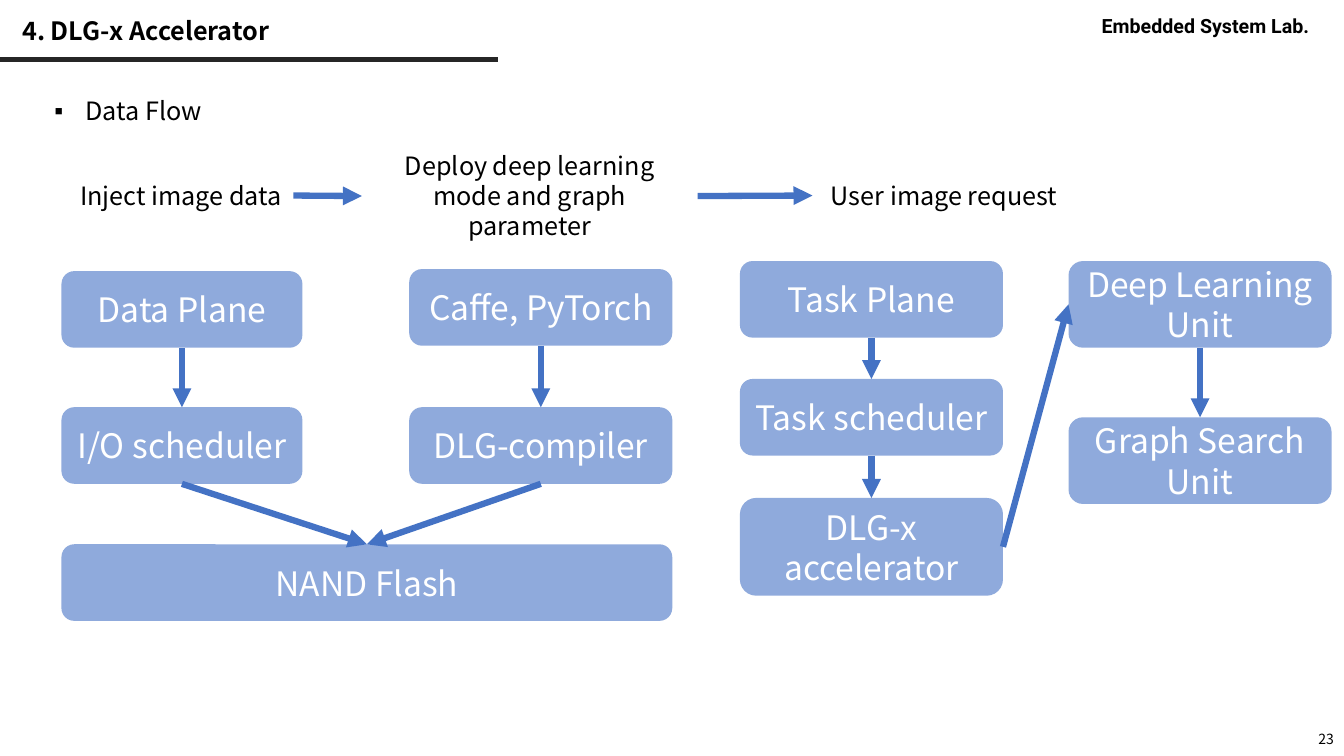
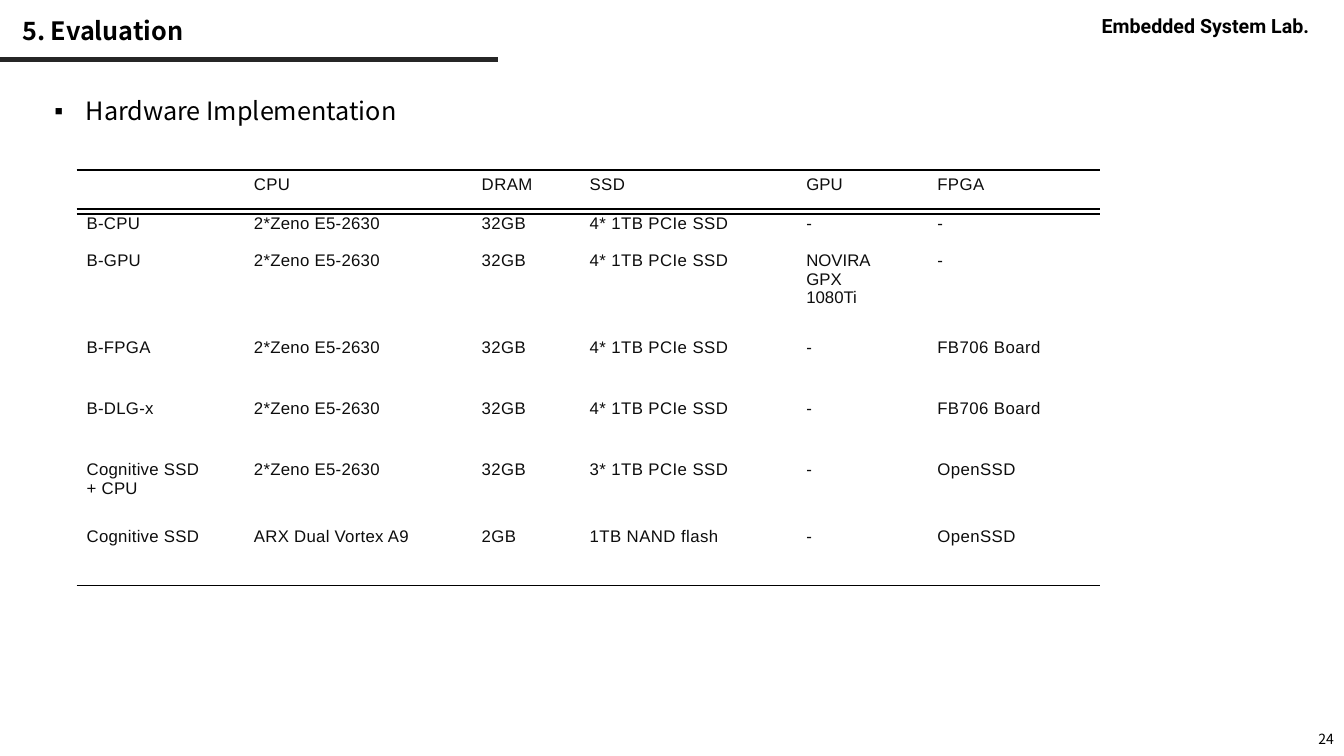
from collections import namedtuple

from lxml import etree
from pptx import Presentation, util as u
from pptx.dml.color import RGBColor
from pptx.enum import shapes, text
from pptx.oxml import parse_xml
from pptx.oxml.ns import nsdecls, qn

BLACK = RGBColor(0x00, 0x00, 0x00)
WHITE = RGBColor(0xFF, 0xFF, 0xFF)
RULE = RGBColor(0x26, 0x26, 0x26)
CELL_TEXT = RGBColor(0x0D, 0x0D, 0x0D)
STEP = RGBColor(0x8F, 0xAA, 0xDC)
ARROW = RGBColor(0x44, 0x72, 0xC4)
SANS, LAB_FONT, TABLE_FONT = "Noto Sans CJK KR", "Roboto", "Arial"
NO_TABLE_STYLE = "{2D5ABB26-0587-4C30-8999-92F81FD0307C}"

# All lengths are columns and rows of one square grid.
GRID = u.Inches(0.1)
COLS, ROWS = 133.33, 75
TOP, LEFT, BOTTOM, RIGHT = range(4)
LEFT_ALIGN, CENTER, RIGHT_ALIGN = (
    text.PP_ALIGN.LEFT, text.PP_ALIGN.CENTER, text.PP_ALIGN.RIGHT)


def cells(count):
    return u.Emu(round(count * GRID))


class Box(namedtuple("Box", "left top width height")):
    def within(self, left, top, width, height):
        """Box whose corner is given relative to this one."""
        return Box(self.left + left, self.top + top, width, height)

    def emu(self):
        return [cells(length) for length in self]


TITLE = Box(1.2, 1.2, 97.1, 4)
LAB = Box(108.3, 0.9, 24.9, 3.4)
TOPIC = Box(4.4, 9, 120.5, 4)
PAGE_NUMBER = Box(103.3, 71.7, 30, 3.2)
FLOW = Box(6.1, 14.4, 126, 47.2)
HARDWARE = Box(7.6, 16.9, 101.5, 41.2)


def write(frame, words, size=18, font=SANS, color=BLACK, bold=False,
          align=LEFT_ALIGN, anchor=text.MSO_ANCHOR.TOP, line_spacing=None,
          bullet=None, tracking=0):
    """Fill a text frame, one paragraph per line of words."""
    frame.text = words
    frame.word_wrap = True
    frame.vertical_anchor = anchor
    for paragraph in frame.paragraphs:
        if bullet:
            props = paragraph._p.get_or_add_pPr()
            props.set("marL", str(cells(3.1)))
            props.set("indent", str(cells(-3.1)))
            etree.SubElement(props, qn("a:buChar")).set("char", bullet)
        paragraph.alignment = align
        paragraph.space_before = u.Pt(0)
        paragraph.line_spacing = line_spacing
        for run in paragraph.runs:
            run.font.size = u.Pt(size)
            run.font.name = font
            run.font.bold = bold
            run.font.color.rgb = color
            if tracking:
                run._r.get_or_add_rPr().set("spc", str(round(tracking * 100)))


def place(shape, box):
    shape.left, shape.top, shape.width, shape.height = box.emu()


def label(slide, box, words, **style):
    shape = slide.shapes.add_textbox(*box.emu())
    write(shape.text_frame, words, **style)
    return shape


def line(slide, color, width, start=(0, 0), end=(0, 0)):
    connector = slide.shapes.add_connector(
        shapes.MSO_CONNECTOR.STRAIGHT, *map(cells, start + end))
    connector.line.color.rgb = color
    connector.line.width = u.Pt(width)
    etree.SubElement(connector._element.spPr, qn("a:effectLst"))
    return connector


def arrow(slide, source, source_side, target, target_side):
    connector = line(slide, ARROW, 4.5)
    connector.begin_connect(source, source_side)
    connector.end_connect(target, target_side)
    etree.SubElement(connector.line._get_or_add_ln(),
                     qn("a:tailEnd")).set("type", "triangle")


def step(slide, box, words):
    shape = slide.shapes.add_shape(
        shapes.MSO_SHAPE.ROUNDED_RECTANGLE, *box.emu())
    shape.shadow.inherit = False
    shape.fill.solid()
    shape.fill.fore_color.rgb = STEP
    shape.line.fill.background()
    write(shape.text_frame, words, size=24, color=WHITE, align=CENTER,
          anchor=text.MSO_ANCHOR.MIDDLE)
    return shape


def content_slide(deck, title, topic, number):
    """Slide with the shared heading, rule, lab name, topic and number."""
    slide = deck.slides.add_slide(deck.slide_layouts[1])
    heading, body = slide.placeholders
    line(slide, RULE, 3, (0, 5.9), (49.4, 5.9))
    label(slide, LAB, "Embedded System Lab.", size=14, font=LAB_FONT,
          bold=True)
    place(heading, TITLE)
    write(heading.text_frame, title, bold=True, line_spacing=0.9,
          anchor=text.MSO_ANCHOR.MIDDLE)
    place(body, TOPIC)
    write(body.text_frame, topic, bullet="▪")
    for placeholder in (heading, body):
        placeholder.text_frame.auto_size = text.MSO_AUTO_SIZE.NONE
    label(slide, PAGE_NUMBER, str(number), size=10, align=RIGHT_ALIGN,
          anchor=text.MSO_ANCHOR.MIDDLE)
    return slide


def data_flow(slide, box):
    phases = [
        label(slide, box.within(*area), words, align=CENTER)
        for area, words in (
            ((0.7, 3, 22.3, 4), "Inject image data"),
            ((29.8, 0, 33.3, 10.1),
             "Deploy deep learning mode and graph parameter"),
            ((74.5, 3, 26.1, 4), "User image request"))]
    for phase, following in zip(phases, phases[1:]):
        arrow(slide, phase, RIGHT, following, LEFT)

    # Each chain: left, width, then (top, height, words) of its steps.
    chains = (
        (0, 23.9, ((12.5, 7.6, "Data Plane"), (26, 7.6, "I/O scheduler"))),
        (34.5, 26.1, ((12.3, 7.6, "Caffe, PyTorch"),
                      (26, 7.6, "DLG-compiler"))),
        (67.3, 26.1, ((11.5, 7.6, "Task Plane"),
                      (23.2, 7.6, "Task scheduler"),
                      (35, 9.7, "DLG-x\naccelerator"))),
        (99.9, 26.1, ((11.5, 8.6, "Deep Learning\nUnit"),
                      (27, 8.6, "Graph Search\nUnit"))))
    built = []
    for left, width, steps in chains:
        chain = [step(slide, box.within(left, top, width, height), words)
                 for top, height, words in steps]
        for source, target in zip(chain, chain[1:]):
            arrow(slide, source, BOTTOM, target, TOP)
        built.append(chain)
    data, model, task, units = built
    flash = step(slide, box.within(0, 39.6, 60.6, 7.6), "NAND Flash")
    for chain in (data, model):
        arrow(slide, chain[-1], BOTTOM, flash, TOP)
    arrow(slide, task[-1], RIGHT, units[0], LEFT)


def rule_cell(cell, edges):
    """Draw black lines on the named edges, T before B."""
    props = cell._tc.get_or_add_tcPr()
    for position, edge in enumerate(edges):
        props.insert(position, parse_xml(
            f'<a:ln{edge} {nsdecls("a")} w="{u.Pt(1.5)}"><a:solidFill>'
            f'<a:srgbClr val="{BLACK}"/></a:solidFill></a:ln{edge}>'))


def hardware_table(slide, box):
    # Width, left inset, right inset and letter spacing of each column.
    columns = ((15.6, 1, 2.5, 0.2), (22.9, 2, 0, 0.2), (10.9, 1.7, 0, 0.3),
               (21.6, 1.5, 0, 0.3), (12.3, 1.4, 3, 0), (18.2, 2.1, 0, 0.3))
    cpu, ssd = "2*Zeno E5-2630", "4* 1TB PCIe SSD"
    # Height, top inset, ruled edges and words of each row.
    rows = (
        (3.8, 0.5, "TB", ("", "CPU", "DRAM", "SSD", "GPU", "FPGA")),
        (0.5, 0, "TB", ("",) * 6),
        (3.3, 0.1, "", ("B-CPU", cpu, "32GB", ssd, "-", "-")),
        (8.7, 0.4, "", ("B-GPU", cpu, "32GB", ssd, "NOVIRA GPX 1080Ti", "-")),
        (5, 0.4, "", ("B-FPGA", cpu, "32GB", ssd, "-", "FB706 Board")),
        (5.8, 1.4, "", ("B-DLG-x", cpu, "32GB", ssd, "-", "FB706 Board")),
        (7.9, 1.7, "", ("Cognitive SSD + CPU", cpu, "32GB",
                        "3* 1TB PCIe SSD", "-", "OpenSSD")),
        (6.2, 0.4, "B", ("Cognitive SSD", "ARX Dual Vortex A9", "2GB",
                         "1TB NAND flash", "-", "OpenSSD")))
    table = slide.shapes.add_table(
        len(rows), len(columns), *box.emu()).table
    table.first_row = table.horz_banding = False
    table._tbl.tblPr.find(qn("a:tableStyleId")).text = NO_TABLE_STYLE
    for column, (width, *_) in zip(table.columns, columns):
        column.width = cells(width)
    for row, (height, top, edges, words) in zip(table.rows, rows):
        row.height = cells(height)
        for cell, entry, (_, left, right, tracking) in zip(
                row.cells, words, columns):
            cell.fill.background()
            cell.margin_left, cell.margin_right = cells(left), cells(right)
            cell.margin_top, cell.margin_bottom = cells(top), 0
            rule_cell(cell, edges)
            if entry:
                write(cell.text_frame, entry, size=12, font=TABLE_FONT,
                      color=CELL_TEXT, tracking=tracking)
            else:
                paragraph = cell.text_frame.paragraphs[0]._p
                etree.SubElement(paragraph, qn("a:endParaRPr")).set(
                    "sz", "100")


def main():
    deck = Presentation()
    deck.slide_width, deck.slide_height = cells(COLS), cells(ROWS)
    data_flow(content_slide(deck, "4. DLG-x Accelerator", "Data Flow", 23),
              FLOW)
    hardware_table(content_slide(deck, "5. Evaluation",
                                 "Hardware Implementation", 24), HARDWARE)
    deck.save("out.pptx")


if __name__ == "__main__":
    main()
